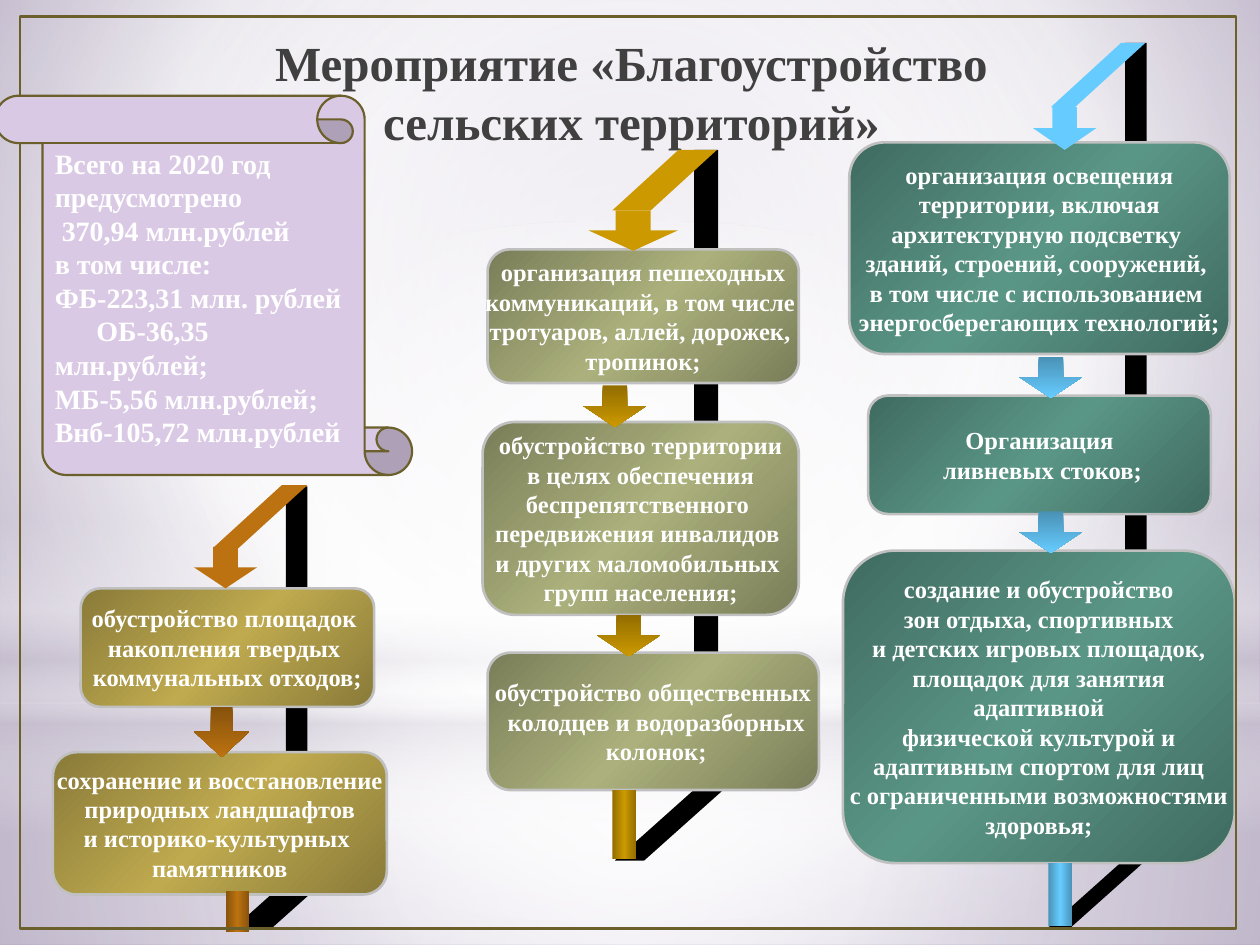
"""Build the slide on rural improvement measures: a budget scroll and three chains of works."""
from lxml.etree import SubElement
from pptx import Presentation
from pptx.dml.color import RGBColor
from pptx.enum.shapes import MSO_SHAPE
from pptx.enum.text import MSO_ANCHOR, PP_ALIGN
from pptx.oxml.ns import qn
from pptx.util import Inches, Pt

COLORS = {
    "white": "FFFFFF", "black": "000000", "title": "404040", "silver": "C0C0C0",
    "olive": "6B5F2B", "scroll": "DAC9E4", "mist": "C9C2D1",
    "lilac": "C1B7CD", "violet": "A191B5",
}
BODY_FONT = {"name": "Times New Roman", "bold": True, "size": Pt(14)}
SCROLL_FONT = BODY_FONT | {"size": Pt(16)}
TITLE_FONT = BODY_FONT | {"size": Pt(28)}


def paint_gradient(fill, holder, stops, angle=None, focus=None):
    """Give the holder element a linear (angle) or circular (focus) gradient."""
    fill.background()
    blank = holder.find(qn("a:noFill"))
    gradient = SubElement(holder, qn("a:gradFill"), rotWithShape="1")
    holder.replace(blank, gradient)
    stop_list = SubElement(gradient, qn("a:gsLst"))
    for position, color, opacity in stops:
        stop = SubElement(stop_list, qn("a:gs"), pos=str(position * 1000))
        tint = SubElement(stop, qn("a:srgbClr"), val=color)
        if opacity < 100:
            SubElement(tint, qn("a:alpha"), val=str(opacity * 1000))
    if focus:
        circle = SubElement(gradient, qn("a:path"), path="circle")
        sides = {side: str(value * 1000) for side, value in zip("ltrb", focus)}
        SubElement(circle, qn("a:fillToRect"), sides)
    else:
        SubElement(gradient, qn("a:lin"), ang=str(angle * 60000), scaled="0")


def add_block(parent, kind, box, color=None, stops=None, angle=None, focus=None,
              adjust=(), outline=None, width=1.5):
    """Add a preset shape with a solid, gradient or empty fill."""
    block = parent.shapes.add_shape(kind, *map(Inches, box))
    block.shadow.inherit = False
    for index, value in enumerate(adjust):
        block.adjustments[index] = value
    if stops:
        paint_gradient(block.fill, block.element.spPr, stops, angle, focus)
    elif color:
        block.fill.solid()
        block.fill.fore_color.rgb = RGBColor.from_string(color)
    else:
        block.fill.background()
    if outline:
        block.line.color.rgb = RGBColor.from_string(outline)
        block.line.width = Pt(width)
    else:
        block.line.fill.background()
    return block


prs = Presentation()
prs.slide_width, prs.slide_height = Inches(10), Inches(7.5)
slide = prs.slides.add_slide(prs.slide_layouts[6])
white, mist, black = COLORS["white"], COLORS["mist"], COLORS["black"]
center = (50, 50, 50, 50)

backdrop = slide.background.fill
backdrop.background()
paint_gradient(backdrop, slide.element.find(".//" + qn("p:bgPr")),
               [(0, COLORS["lilac"], 100), (60, white, 100), (100, COLORS["violet"], 100)],
               focus=(20, 10, 20, 60))

glows = [
    (MSO_SHAPE.RECTANGLE, (0, 5.58, 10, 1.92),
     [(0, white, 91), (37, white, 76), (100, mist, 79)], None, center),
    (MSO_SHAPE.RECTANGLE, (0, 0, 10, 5.58),
     [(0, white, 89), (48, white, 62), (100, mist, 79)], None, center),
    (MSO_SHAPE.RECTANGLE, (0, 4.12, 10, 2.5),
     [(0, white, 0), (29, white, 30), (45, mist, 40), (55, white, 26),
      (65, mist, 60), (100, white, 0)], 90, None),
    (MSO_SHAPE.OVAL, (0, 1.75, 10, 5.58), [(0, white, 100), (56, white, 0)], None, center),
]
for kind, box, stops, angle, focus in glows:
    add_block(slide, kind, box, stops=stops, angle=angle, focus=focus)

for pole in [(8.93, 0.34, 0.17, 4.08), (5.51, 1.19, 0.19, 4.5), (2.27, 3.86, 0.17, 3.05)]:
    add_block(slide, MSO_SHAPE.RECTANGLE, pole, black)

title = slide.shapes.add_textbox(Inches(1.45), Inches(0.21), Inches(7.12), Inches(1.25))
title.text_frame.word_wrap = True
title.text_frame.text = "Мероприятие «Благоустройство сельских территорий»"
heading = title.text_frame.paragraphs[0]
heading.alignment = PP_ALIGN.CENTER
for name, value in TITLE_FONT.items():
    setattr(heading.runs[0].font, name, value)
heading.runs[0].font.color.rgb = RGBColor.from_string(COLORS["title"])

columns = [
    {
        "edge": "406B60", "middle": "5A9686", "shade": "4992B6", "accent": "66CCFF",
        "foot": (8.32, 6.85, 0.75, 0.51), "slant": (8.34, 0.34, 0.75, 0.51),
        "head": (8.2, 0.85, 0.5, 0.34), "stem": (8.32, 6.85, 0.19, 0.5),
        "arrows": [(8.09, 2.83, 0.5, 0.33), (8.09, 4.06, 0.5, 0.33)],
        "works": [
            ((6.74, 1.13, 3.02, 1.68),
             "организация освещения\n территории, включая \nархитектурную подсветку \n"
             "зданий, строений, сооружений, \nв том числе с использованием \n"
             "энергосберегающих технологий;"),
            ((6.89, 3.14, 2.72, 0.94), "Организация\n ливневых стоков;"),
            ((6.69, 4.37, 3.11, 2.48),
             "создание и обустройство\n зон отдыха, спортивных \nи детских игровых площадок,\n"
             " площадок для занятия \vадаптивной\n физической культурой и \n"
             "адаптивным спортом для лиц\n с ограниченными возможностями \nздоровья;"),
        ],
    },
    {
        "edge": "897A39", "middle": "BFAA4F", "shade": "86520B", "accent": "BC7210",
        "foot": (1.85, 7.06, 0.65, 0.31), "slant": (1.69, 3.85, 0.75, 0.5),
        "head": (1.54, 4.34, 0.5, 0.33), "stem": (1.79, 7.07, 0.19, 0.33),
        "arrows": [(1.54, 5.61, 0.44, 0.4)],
        "works": [
            ((0.64, 4.67, 2.33, 0.94),
             "обустройство площадок \nнакопления твердых \nкоммунальных отходов;"),
            ((0.42, 5.97, 2.65, 1.13),
             "сохранение и восстановление\n природных ландшафтов \n"
             "и историко-культурных \nпамятников"),
        ],
    },
    {
        "edge": "7A7E59", "middle": "ABB07C", "shade": "926D00", "accent": "CC9900",
        "foot": (4.88, 6.27, 0.86, 0.56), "slant": (4.86, 1.19, 0.83, 0.48),
        "head": (4.67, 1.67, 0.71, 0.32), "stem": (4.86, 6.27, 0.19, 0.55),
        "arrows": [(4.63, 3.06, 0.5, 0.33), (4.74, 4.88, 0.5, 0.33)],
        "works": [
            ((3.87, 1.98, 2.47, 1.06),
             "организация пешеходных\nкоммуникаций, в том числе \n"
             "тротуаров, аллей, дорожек, \nтропинок;"),
            ((3.83, 3.35, 2.51, 1.53),
             "обустройство территории\n в целях обеспечения \nбеспрепятственного \n"
             "передвижения инвалидов \nи других маломобильных \nгрупп населения;"),
            ((3.87, 5.18, 2.63, 1.09),
             "обустройство общественных\n колодцев и водоразборных\n колонок;"),
        ],
    },
]
arrow_adjust = (0.505, 0.389)
for column in columns:
    edge, middle, shade, accent = (column[key] for key in ("edge", "middle", "shade", "accent"))
    add_block(slide, MSO_SHAPE.PARALLELOGRAM, column["foot"], black, adjust=[1.119])
    for box, wording in column["works"]:
        work = add_block(slide, MSO_SHAPE.ROUNDED_RECTANGLE, box, angle=45, adjust=[0.167],
                         stops=[(0, edge, 100), (50, middle, 100), (100, edge, 100)],
                         outline=COLORS["silver"])
        work.text_frame.word_wrap = False
        work.text_frame.vertical_anchor = MSO_ANCHOR.MIDDLE
        work.text_frame.text = wording
        for line in work.text_frame.paragraphs:
            line.alignment = PP_ALIGN.CENTER
            for run in line.runs:
                for name, value in BODY_FONT.items():
                    setattr(run.font, name, value)
                run.font.color.rgb = RGBColor.from_string(white)
    bent_arrow = slide.shapes.add_group_shape()
    add_block(bent_arrow, MSO_SHAPE.PARALLELOGRAM, column["slant"], accent, adjust=[1.094])
    add_block(bent_arrow, MSO_SHAPE.DOWN_ARROW, column["head"], accent, adjust=arrow_adjust[::-1])
    for box in column["arrows"]:
        add_block(slide, MSO_SHAPE.DOWN_ARROW, box, angle=90, adjust=arrow_adjust[::-1],
                  stops=[(0, shade, 100), (100, accent, 100)])
    add_block(slide, MSO_SHAPE.RECTANGLE, column["stem"], angle=0,
              stops=[(0, shade, 100), (50, accent, 100), (100, shade, 100)])

add_block(slide, MSO_SHAPE.RECTANGLE, (0.16, 0.13, 9.65, 7.24), outline=COLORS["olive"])

budget = add_block(slide, MSO_SHAPE.HORIZONTAL_SCROLL, (0.11, 0.61, 3.01, 3.31),
                   COLORS["scroll"], outline=COLORS["olive"], width=1.25)
budget.rotation = 90
budget.text_frame.word_wrap = True
budget.text_frame.vertical_anchor = MSO_ANCHOR.MIDDLE
budget.text_frame._txBody.bodyPr.set("vert", "vert270")
budget.text_frame.text = (
    "Всего на 2020 год предусмотрено\n 370,94 млн.рублей\nв том числе:\n"
    "ФБ-223,31 млн. рублей\nОБ-36,35\vмлн.рублей;\nМБ-5,56 млн.рублей;\nВнб-105,72 млн.рублей")
for line in budget.text_frame.paragraphs:
    line.alignment = PP_ALIGN.LEFT
    if line.text.startswith("ОБ"):
        line._p.get_or_add_pPr().set("indent", str(Inches(0.33)))
    for run in line.runs:
        for name, value in SCROLL_FONT.items():
            setattr(run.font, name, value)
        run.font.color.rgb = RGBColor.from_string(white)

prs.save("out.pptx")
